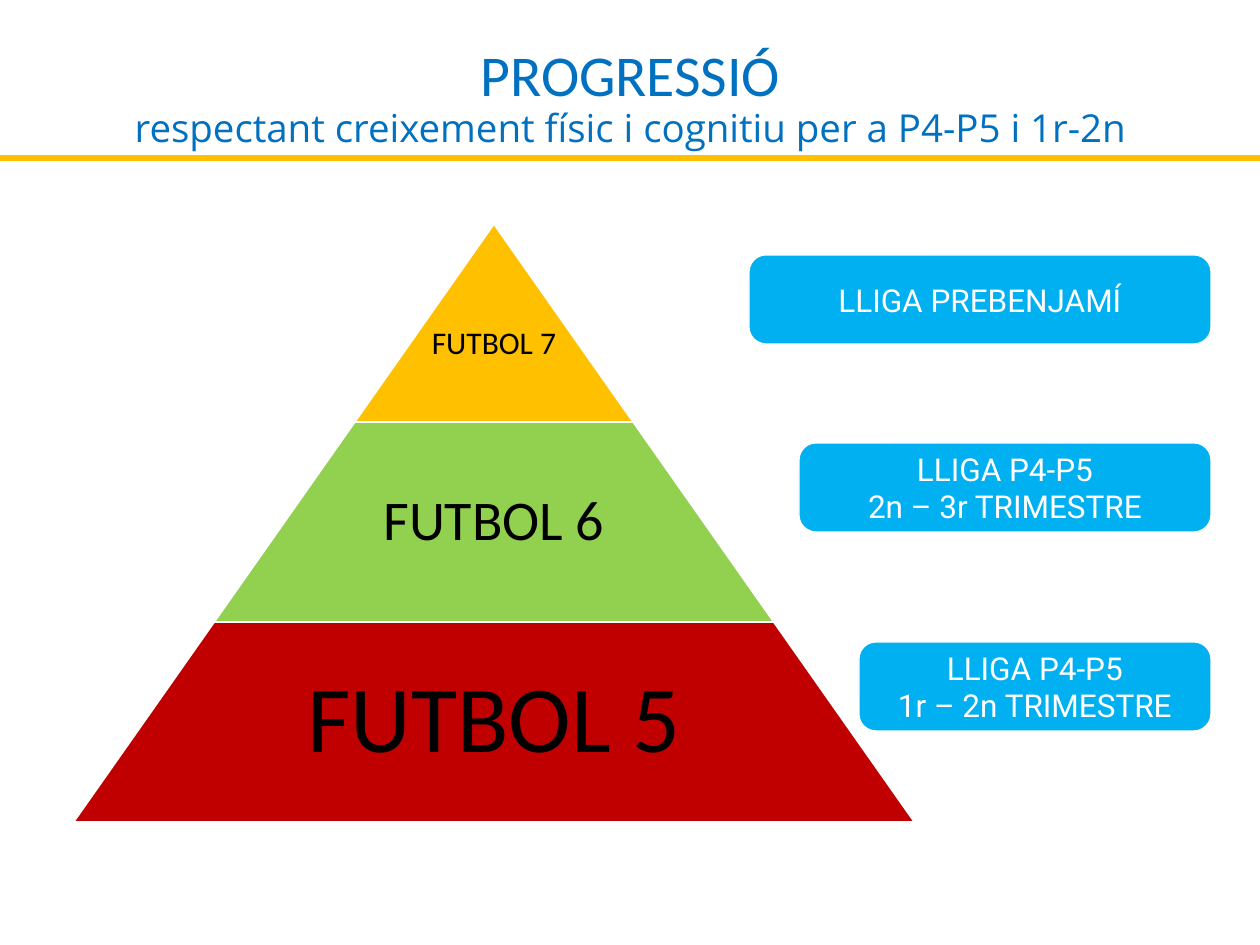
from dataclasses import dataclass

from pptx import Presentation
from pptx import util as u
from pptx.dml.color import RGBColor
from pptx.enum import shapes, text

PX = 914400 / 126
APEX_X, APEX_Y = 494, 224
SLOPE = 0.703  # horizontal run of the pyramid's side per unit of depth
RIGHT_EDGE = 1211
WHITE, BLACK, BLUE, SKY, AMBER = "FFFFFF", "000000", "0070C0", "00B0F0", "FFC000"


@dataclass
class Tier:
    label: str
    height: int
    fill: str
    size: int
    drop: int = 0


@dataclass
class League:
    lines: tuple[str, ...]
    top: int
    width: int


TIERS = [
    Tier("FUTBOL 7", 198, AMBER, 18, drop=21),
    Tier("FUTBOL 6", 200, "92D050", 32),
    Tier("FUTBOL 5", 200, "C00000", 54),
]
LEAGUES = [
    League(("LLIGA PREBENJAMÍ",), 255, 462),
    League(("LLIGA P4-P5", "2n – 3r TRIMESTRE"), 443, 412),
    League(("LLIGA P4-P5", "1r – 2n TRIMESTRE"), 642, 352),
]


def px(*values: float) -> list[u.Emu]:
    return [u.Emu(round(value * PX)) for value in values]


def color(value: str) -> RGBColor:
    return RGBColor.from_string(value)


def add_span(para, words: str, font: str, size: int, ink: str) -> None:
    span = para.add_run()
    span.text = words
    span.font.name = font
    span.font.size = u.Pt(size)
    span.font.color.rgb = color(ink)


def add_block(page, kind, box: tuple, fill: str, line_width: float = 0):
    block = page.shapes.add_shape(kind, *px(*box))
    block.shadow.inherit = False
    block.fill.solid()
    block.fill.fore_color.rgb = color(fill)
    if line_width:
        block.line.color.rgb = color(WHITE)
        block.line.width = u.Pt(line_width)
    else:
        block.line.fill.background()
    return block


def set_title(page) -> None:
    title = page.shapes.title
    title.left, title.top, title.width, title.height = px(35, 0, 1191, 198)
    frame = title.text_frame
    frame.word_wrap = True
    frame.auto_size = text.MSO_AUTO_SIZE.NONE
    frame.vertical_anchor = text.MSO_ANCHOR.MIDDLE
    para = frame.paragraphs[0]
    para.alignment = text.PP_ALIGN.CENTER
    para.line_spacing = 0.9
    add_span(para, "PROGRESSIÓ", "Calibri", 33, BLUE)
    para.add_line_break()
    add_span(para, "respectant creixement físic i cognitiu per a P4-P5 i 1r-2n",
             "Open Sans", 22, BLUE)


def add_tier(page, tier: Tier, top: int) -> None:
    bottom = top + tier.height
    half = SLOPE * (bottom - APEX_Y)
    left, width = APEX_X - half, 2 * half
    block = add_block(page, shapes.MSO_SHAPE.TRAPEZOID,
                      (left, top, width, tier.height), tier.fill, 1)
    block.adjustments[0] = SLOPE

    box = page.shapes.add_textbox(*px(left, top + tier.drop, width, tier.height))
    frame = box.text_frame
    frame.word_wrap = True
    frame.vertical_anchor = text.MSO_ANCHOR.MIDDLE
    frame.margin_left = frame.margin_right = 0
    frame.margin_top = frame.margin_bottom = 0
    para = frame.paragraphs[0]
    para.alignment = text.PP_ALIGN.CENTER
    para.line_spacing = 0.9
    add_span(para, tier.label, "Calibri", tier.size, BLACK)


def add_league(page, league: League) -> None:
    block = add_block(page, shapes.MSO_SHAPE.ROUNDED_RECTANGLE,
                      (RIGHT_EDGE - league.width, league.top, league.width, 89), SKY, 0.75)
    block.adjustments[0] = 0.19
    frame = block.text_frame
    frame.word_wrap = False
    frame.vertical_anchor = text.MSO_ANCHOR.MIDDLE
    for index, line in enumerate(league.lines):
        para = frame.add_paragraph() if index else frame.paragraphs[0]
        para.alignment = text.PP_ALIGN.CENTER
        add_span(para, line, "Roboto", 18, WHITE)


def main() -> None:
    deck = Presentation()
    deck.slide_width, deck.slide_height = px(1260, 945)
    page = deck.slides.add_slide(deck.slide_layouts[5])
    set_title(page)
    add_block(page, shapes.MSO_SHAPE.RECTANGLE, (-10, 155, 1275, 6), AMBER)
    top = APEX_Y
    for tier in TIERS:
        add_tier(page, tier, top)
        top += tier.height
    for league in LEAGUES:
        add_league(page, league)
    deck.save("out.pptx")


if __name__ == "__main__":
    main()
